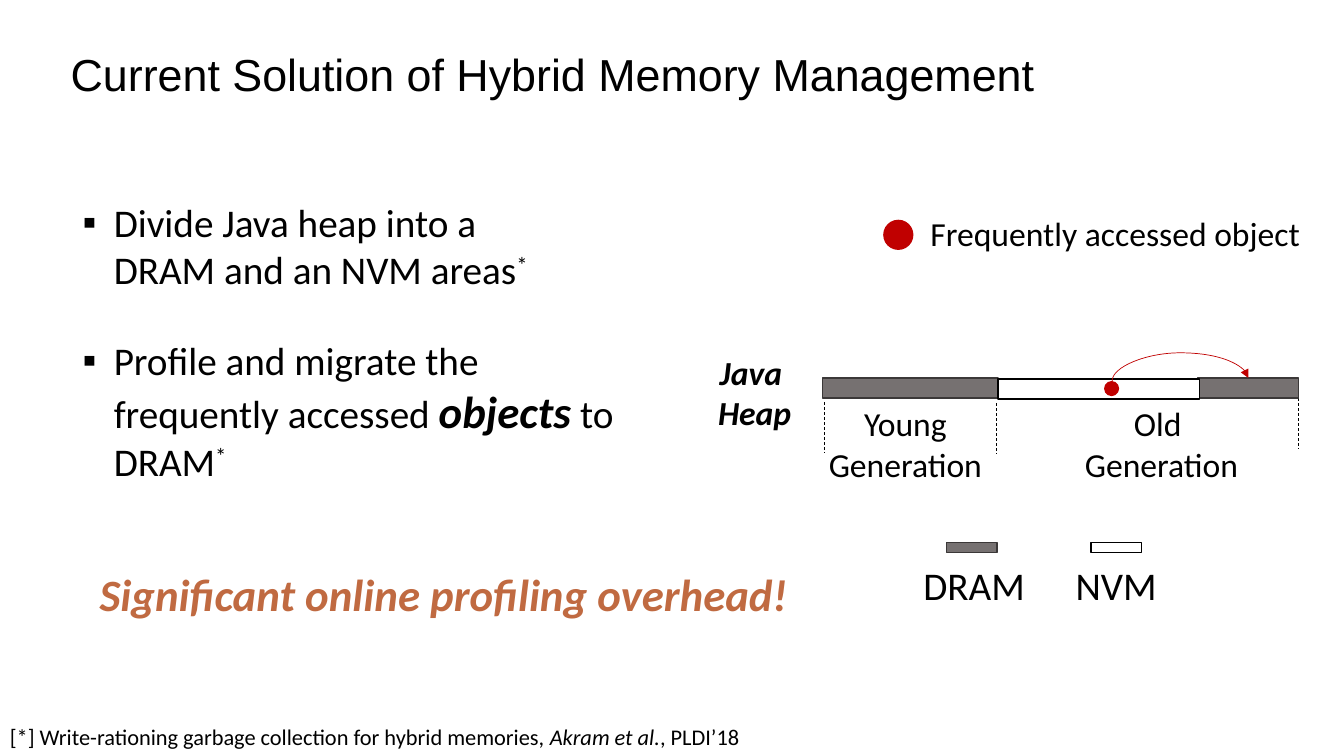
from lxml.etree import SubElement
from pptx import Presentation
from pptx.dml.color import RGBColor
from pptx.enum.dml import MSO_LINE
from pptx.enum.shapes import MSO_CONNECTOR as Connector, MSO_SHAPE as Shape
from pptx.enum.text import MSO_ANCHOR as Anchor, MSO_AUTO_SIZE as AutoSize, PP_ALIGN as Align
from pptx.oxml.ns import qn
from pptx.util import Pt

PX = 9144
COLOURS = {"ink": "000000", "dram": "767171", "dram_edge": "3B3838", "nvm": "FFFFFF",
           "hot": "C00000", "warning": "C06A41"}
BOLD_ITALIC = {"bold": True, "italic": True}


def px(*lengths):
    """Turn px lengths into EMU."""
    return [length * PX for length in lengths]


def colour(name):
    """Look up a named colour."""
    return RGBColor.from_string(COLOURS[name])


def add_run(paragraph, text, size, ink="ink", font="Calibri", superscript=False, **formats):
    """Append one formatted run."""
    run = paragraph.add_run()
    run.text = text
    for name, value in {"size": Pt(size), "name": font, **formats}.items():
        setattr(run.font, name, value)
    run.font.color.rgb = colour(ink)
    if superscript:
        run._r.get_or_add_rPr().set("baseline", "30000")


def add_text(slide, box, paragraphs, align=Align.LEFT, wrap=False):
    """Add a text box whose paragraphs are lists of (text, size, formats)."""
    frame = slide.shapes.add_textbox(*px(*box)).text_frame
    frame.word_wrap = wrap
    frame.auto_size = AutoSize.SHAPE_TO_FIT_TEXT
    for index, runs in enumerate(paragraphs):
        paragraph = frame.add_paragraph() if index else frame.paragraphs[0]
        paragraph.alignment = align
        for text, size, formats in runs:
            add_run(paragraph, text, size, **formats)
    return frame


def add_block(slide, kind, box, fill, edge=None):
    """Add a filled shape, outlined when an edge colour is given."""
    shape = slide.shapes.add_shape(kind, *px(*box))
    shape.shadow.inherit = False
    shape.fill.solid()
    shape.fill.fore_color.rgb = colour(fill)
    if edge:
        shape.line.color.rgb = colour(edge)
        shape.line.width = Pt(1)
    else:
        shape.line.fill.background()


def add_line(slide, kind, points, ink):
    """Add a thin connector without a shadow."""
    connector = slide.shapes.add_connector(kind, *px(*points))
    connector.line.color.rgb = colour(ink)
    connector.line.width = Pt(0.5)
    SubElement(connector._element.spPr, qn("a:effectLst"))
    return connector


def add_title(slide, box, text):
    """Place and format the title placeholder."""
    title = slide.shapes.title
    for name, value in zip(("left", "top", "width", "height"), px(*box)):
        setattr(title, name, value)
    title.text_frame.vertical_anchor = Anchor.MIDDLE
    paragraph = title.text_frame.paragraphs[0]
    paragraph.alignment = Align.LEFT
    paragraph.line_spacing = 0.9
    add_run(paragraph, text, 32, font="Arial")


def add_bullet(slide, box, runs):
    """Add a text box holding one square-bulleted paragraph."""
    frame = add_text(slide, box, [runs], wrap=True)
    properties = frame.paragraphs[0]._p.get_or_add_pPr()
    indent = 31 * PX
    properties.set("marL", str(indent))
    properties.set("indent", str(-indent))
    SubElement(properties, qn("a:buFont"), typeface="Arial")
    SubElement(properties, qn("a:buChar"), char="▪")


def add_migration_arrow(slide, left, top, span, drop, rise):
    """Draw the arc that leaves the object, rises and lands on DRAM."""
    middle_x, middle_y = left + span // 2, top + drop // 2
    near_x, near_y = middle_x - drop // 2, middle_y - span // 2
    arc = add_line(slide, Connector.CURVE, (near_x + drop, near_y + span, near_x, near_y), "hot")
    properties = arc._element.spPr
    properties.find(qn("a:xfrm")).set("rot", "5400000")
    guides = properties.find(qn("a:prstGeom")).get_or_add_avLst()
    bend = round((rise + drop) / drop * 100000)
    SubElement(guides, qn("a:gd"), name="adj1", fmla=f"val {bend}")
    SubElement(arc.line._get_or_add_ln(), qn("a:tailEnd"), type="triangle")


def add_heap(slide, left, top):
    """Draw the Java heap bar, its generations and the migrated object."""
    add_text(slide, (left - 114, top - 31, 93, 91),
             [[(word, 24, BOLD_ITALIC)] for word in ("Java ", "Heap")], Align.CENTER)
    add_text(slide, (left - 8, top + 20, 180, 91), [[("Young Generation", 24, {})]],
             Align.CENTER, wrap=True)
    add_text(slide, (left + 249, top + 20, 174, 91),
             [[(word, 24, {})] for word in ("Old ", "Generation")], Align.CENTER)
    for x, y in ((2, 24), (172, 25), (472, 20)):
        divider = add_line(slide, Connector.STRAIGHT,
                           (left + x, top + y, left + x, top + y + 50), "ink")
        divider.line.dash_style = MSO_LINE.DASH
    for x, y, width, fill, edge in ((0, 0, 174, "dram", "dram_edge"),
                                    (372, 0, 100, "dram", "dram_edge"),
                                    (174, 1, 200, "nvm", "ink")):
        add_block(slide, Shape.RECTANGLE, (left + x, top + y, width, 20), fill, edge)
    add_block(slide, Shape.OVAL, (left + 279, top + 3, 15, 15), "hot")
    add_migration_arrow(slide, left + 287, top, 135, 3, 25)


def add_object_key(slide, left, top):
    """Explain the red dot."""
    add_block(slide, Shape.OVAL, (left, top + 12, 30, 30), "hot")
    add_text(slide, (left + 37, top, 404, 50), [[("Frequently accessed object", 24, {})]])


def add_memory_key(slide, left, top):
    """Explain the two memory colours."""
    for x, label_x, width, label, fill, edge in (
            (33, 0, 122, "DRAM", "dram", "dram_edge"), (176, 151, 102, "NVM", "nvm", "ink")):
        add_block(slide, Shape.RECTANGLE, (left + x, top, 50, 10), fill, edge)
        add_text(slide, (left + label_x, top + 14, width, 57), [[(label, 28, {})]])


def main():
    """Build and save the slide."""
    presentation = Presentation()
    presentation.slide_width, presentation.slide_height = px(1333, 750)
    slide = presentation.slides.add_slide(presentation.slide_layouts[5])
    star = ("*", 28, {"superscript": True})
    add_title(slide, (60, 30, 1084, 93), "Current Solution of Hybrid Memory Management")
    add_bullet(slide, (72, 192, 511, 135),
               [("Divide Java heap into a DRAM and an NVM areas", 28, {}), star])
    add_bullet(slide, (72, 329, 552, 158),
               [("Profile and migrate the frequently accessed ", 28, {}),
                ("objects", 32, BOLD_ITALIC), (" to DRAM", 28, {}), star])
    add_text(slide, (89, 557, 720, 64),
             [[("Significant online profiling overhead!", 32, {"ink": "warning", **BOLD_ITALIC})]],
             wrap=True)
    add_object_key(slide, 876, 206)
    add_heap(slide, 816, 375)
    add_memory_key(slide, 906, 538)
    add_text(slide, (0, 713, 757, 37),
             [[("[*] Write-rationing garbage collection for hybrid memories, ", 16, {}),
               ("Akram et al.", 16, {"italic": True}), (", PLDI’18", 16, {})]])
    presentation.save("out.pptx")


if __name__ == "__main__":
    main()
